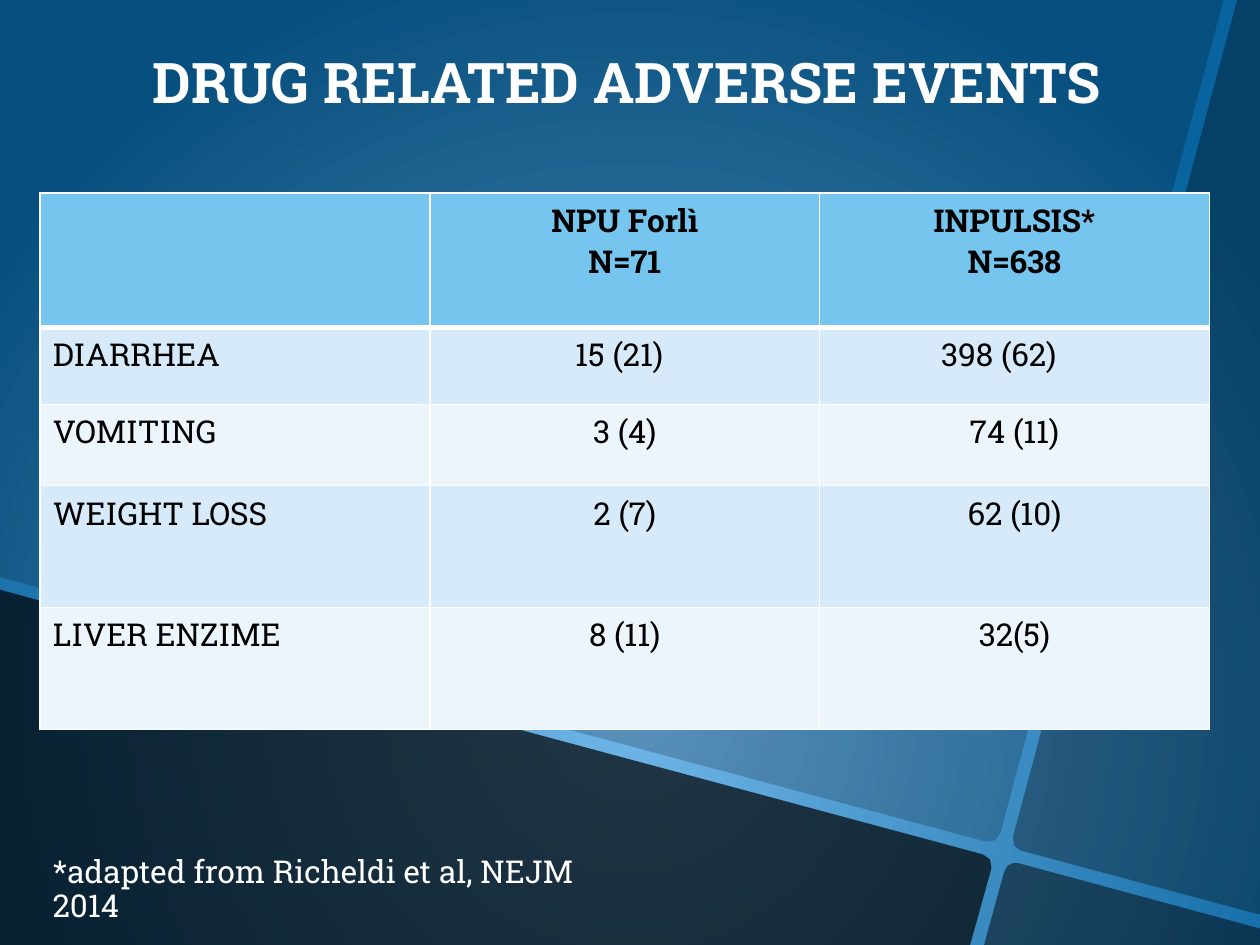
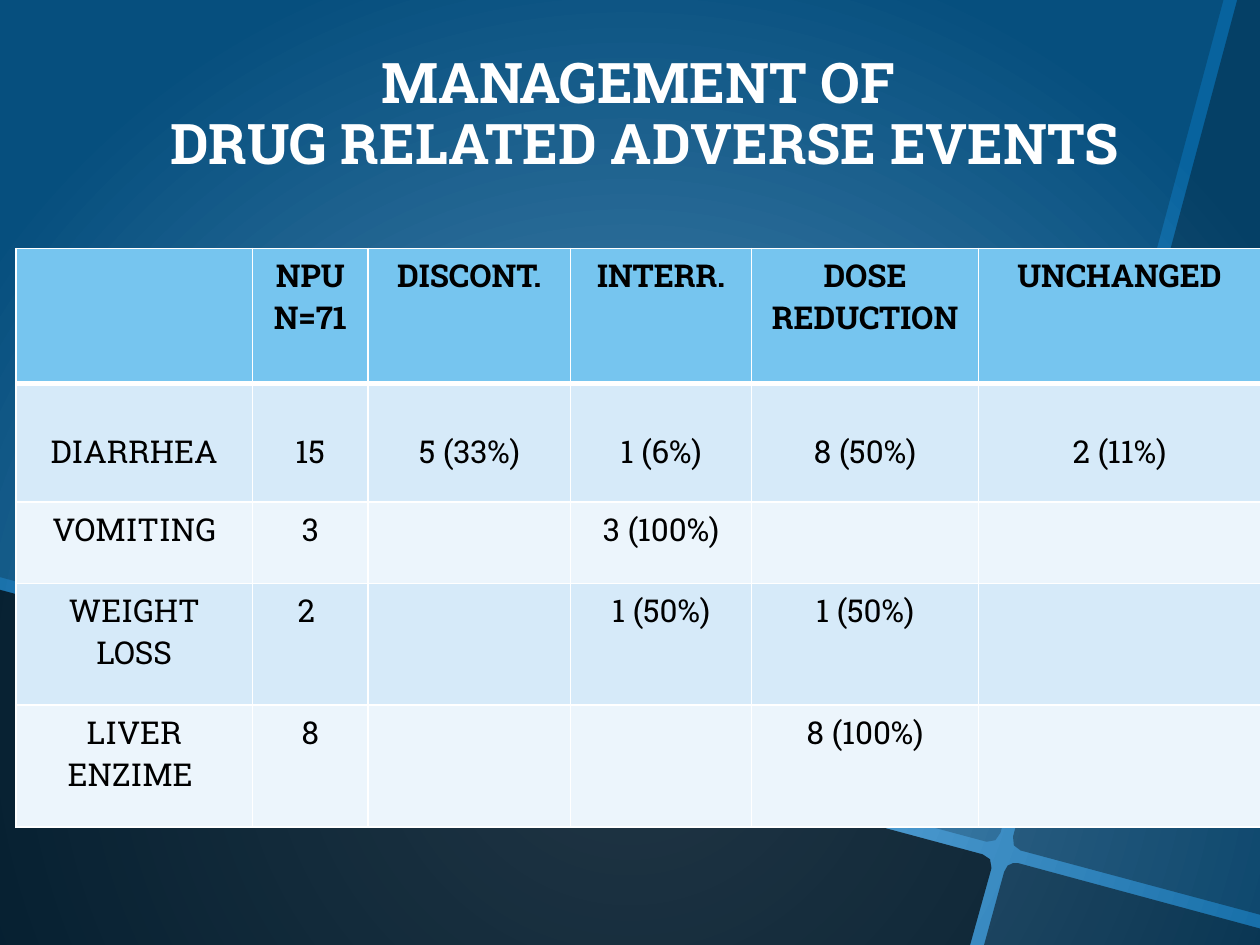
import pptx
import pptx.util
import pptx.dml.color
import pptx.enum.text
import pptx.oxml.ns
from lxml import etree

Pt = pptx.util.Pt
qn = pptx.oxml.ns.qn
RGB = pptx.dml.color.RGBColor.from_string
ALIGN = pptx.enum.text.PP_ALIGN

FONT = "Roboto Slab"
COLORS = {
    "glow": "70B6E8",
    "edge": "08639E",
    "shade": "000000",
    "header": "76C5EF",
    "odd_row": "D6EAF9",
    "even_row": "ECF5FC",
    "ink": "000000",
    "white": "FFFFFF",
}


def write_text(tf, text, size, color, bold=False, align=ALIGN.LEFT, spacing=1.0):
    """Write each line of text as its own paragraph."""
    for i, line in enumerate(text.split("\n")):
        p = tf.paragraphs[0] if i == 0 else tf.add_paragraph()
        p.alignment = align
        p.line_spacing = spacing
        p.space_before = Pt(0)
        r = p.add_run()
        r.text = line
        r.font.name = FONT
        r.font.size = Pt(size)
        r.font.bold = bold
        r.font.color.rgb = RGB(COLORS[color])


def set_borders(cell, widths):
    """Draw white cell borders; widths maps L, R, T and B to points."""
    tcPr = cell._tc.get_or_add_tcPr()
    for side, width in widths.items():
        ln = etree.SubElement(tcPr, qn(f"a:ln{side}"), w=str(Pt(width)))
        fill = etree.SubElement(ln, qn("a:solidFill"))
        etree.SubElement(fill, qn("a:srgbClr"), val=COLORS["white"])


prs = pptx.Presentation()
prs.slide_width, prs.slide_height = Pt(720), Pt(540)
layout = prs.slide_layouts[5]

# Radial background on the master
fill = prs.slide_master.background.fill
fill.gradient()
for stop, name in zip(fill.gradient_stops, ("glow", "edge")):
    stop.color.rgb = RGB(COLORS[name])
lin = next(prs.slide_master.element.iter(qn("a:lin")))
circle = etree.Element(qn("a:path"), path="circle")
etree.SubElement(circle, qn("a:fillToRect"), l="50000", t="50000", r="50000", b="0")
lin.getparent().replace(lin, circle)

# Translucent dark panes: opacity in percent, outline in points
panes = [
    (20, [(0, 0), (699.1, 0), (571.7, 475.9), (568.8, 480.1), (563.8, 481), (0, 329.8)]),
    (70, [(0, 337), (561.6, 488.2), (565.8, 491), (566.6, 496.1), (554.4, 540), (0, 540)]),
    (50, [(578.9, 493.2), (581.8, 493.2), (720, 530.6), (720, 540), (562.3, 540),
          (573.8, 498.2), (575.8, 494.6)]),
    (35, [(707, 0), (720, 0), (720, 522.7), (583.2, 486), (579.4, 483.1), (578.9, 478.1)]),
]

slides = [
    {
        "title": "DRUG RELATED ADVERSE EVENTS",
        "title_height": 46,
        "title_align": ALIGN.LEFT,
        "label_align": ALIGN.LEFT,
        "origin": (23, 110.2),
        "cols": [222.7] * 3,
        "rows": [77, 44, 46.4, 69.6, 69.6],
        "cells": [
            ["", "NPU Forlì\nN=71", "INPULSIS*\nN=638"],
            ["DIARRHEA", "15 (21)", "398 (62)"],
            ["VOMITING", "3 (4)", "74 (11)"],
            ["WEIGHT LOSS", "2 (7)", "62 (10)"],
            ["LIVER ENZIME", "8 (11)", "32(5)"],
        ],
        "left_indents": {(1, 1): 83, (1, 2): 69.5},
        "top_margins": {},
        "note": "*adapted from Richeldi et al, NEJM 2014",
    },
    {
        "title": "MANAGEMENT OF \nDRUG RELATED ADVERSE EVENTS",
        "title_height": 85,
        "title_align": ALIGN.CENTER,
        "label_align": ALIGN.CENTER,
        "origin": (9.2, 142),
        "cols": [135, 66.2, 115.7, 103.5, 129.6, 161.2],
        "rows": [77, 68, 46.4, 69.6, 69.6],
        "cells": [
            ["", "NPU N=71", "DISCONT.", "INTERR.", "DOSE REDUCTION", "UNCHANGED"],
            ["DIARRHEA", "15", "5 (33%)", "1 (6%)", "8 (50%)", "2 (11%)"],
            ["VOMITING", "3", "", "3 (100%)", "", ""],
            ["WEIGHT LOSS", "2 ", "", "1 (50%)", "1 (50%)", ""],
            ["LIVER ENZIME ", "8", "", "", "8 (100%)", ""],
        ],
        "left_indents": {},
        "top_margins": {1: 27.3},
        "note": "",
    },
]

for n, data in enumerate(slides):
    s = prs.slides.add_slide(layout)

    # The panes are built once and moved to the shared layout
    if n == 0:
        for i, (opacity, outline) in enumerate(panes):
            points = [(Pt(x), Pt(y)) for x, y in outline]
            builder = s.shapes.build_freeform(*points[0])
            builder.add_line_segments(points[1:])
            sp = builder.convert_to_shape()
            sp.shadow.inherit = False
            sp.line.fill.background()
            sp.fill.solid()
            sp.fill.fore_color.rgb = RGB(COLORS["shade"])
            clr = next(sp._element.spPr.iter(qn("a:srgbClr")))
            etree.SubElement(clr, qn("a:alpha"), val=str(opacity * 1000))
            layout.shapes.element.insert(2 + i, sp._element)

    title = s.shapes.title
    title.left, title.top = Pt(80), Pt(27)
    title.width, title.height = Pt(577.5), Pt(data["title_height"])
    tf = title.text_frame
    tf.word_wrap = True
    tf.auto_size = pptx.enum.text.MSO_AUTO_SIZE.NONE
    tf.vertical_anchor = pptx.enum.text.MSO_ANCHOR.TOP
    write_text(tf, data["title"], 32, "white", True, data["title_align"], 0.92)

    cols, rows = data["cols"], data["rows"]
    left, top = data["origin"]
    table = s.shapes.add_table(len(rows), len(cols), Pt(left), Pt(top),
                               Pt(sum(cols)), Pt(sum(rows))).table
    for col, width in zip(table.columns, cols):
        col.width = Pt(width)
    for row, height in zip(table.rows, rows):
        row.height = Pt(height)

    for i, texts in enumerate(data["cells"]):
        row_fill = "header" if i == 0 else "odd_row" if i % 2 else "even_row"
        widths = {"L": 1, "R": 1, "T": 3 if i == 1 else 1, "B": 3 if i == 0 else 1}
        for j, text in enumerate(texts):
            cell = table.cell(i, j)
            set_borders(cell, widths)
            cell.fill.solid()
            cell.fill.fore_color.rgb = RGB(COLORS[row_fill])
            align = data["label_align"] if j == 0 else ALIGN.CENTER
            if (i, j) in data["left_indents"]:
                align = ALIGN.LEFT
                cell.margin_left = Pt(data["left_indents"][i, j])
            if i in data["top_margins"]:
                cell.margin_top = Pt(data["top_margins"][i])
            if text:
                write_text(cell.text_frame, text, 18, "ink", i == 0, align)

    if data["note"]:
        note = s.shapes.add_textbox(Pt(23), Pt(485.5), Pt(348), Pt(29))
        note.text_frame.word_wrap = True
        write_text(note.text_frame, data["note"], 18, "white", spacing=0.9)

prs.save("out.pptx")
